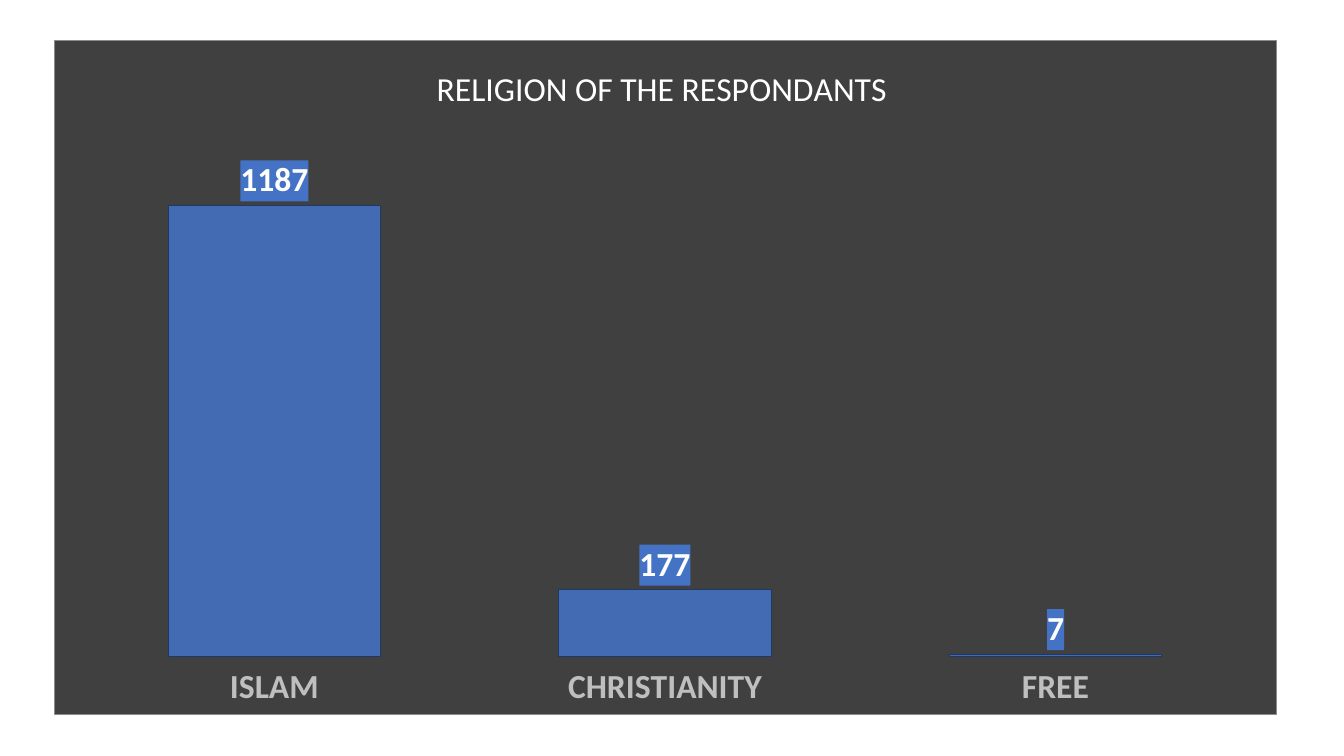
from dataclasses import dataclass

from lxml import etree
from pptx import Presentation
from pptx.chart.data import CategoryChartData
from pptx.dml.color import RGBColor
from pptx.enum.chart import XL_CHART_TYPE, XL_LABEL_POSITION, XL_TICK_LABEL_POSITION, XL_TICK_MARK
from pptx.oxml import parse_xml
from pptx.oxml.ns import nsdecls, qn
from pptx.util import Inches, Pt

COLUMNS = XL_CHART_TYPE.COLUMN_CLUSTERED
OUTSIDE_END = XL_LABEL_POSITION.OUTSIDE_END
LABELS_LOW = XL_TICK_LABEL_POSITION.LOW
NO_TICK = XL_TICK_MARK.NONE
BLANK_LAYOUT = 6


@dataclass(frozen=True)
class Theme:
    font: str = "Calibri"
    text_size: int = 24
    panel: str = "404040"
    panel_border: str = "8C8C8C"
    bar: str = "4472C4"
    bar_border: str = "203864"
    bar_alpha: int = 88
    bright: str = "FFFFFF"
    muted: str = "BFBFBF"


@dataclass(frozen=True)
class Box:
    left: float
    top: float
    width: float
    height: float


THEME = Theme()
CHART_BOX = Box(0.54, 0.4, 12.12, 6.69)
PLOT_BOX = Box(0.78, 1.23, 11.63, 5.29)
RESPONDENTS = {"ISLAM": 1187, "CHRISTIANITY": 177, "FREE": 7}


def style_font(font, color, bold):
    font.name = THEME.font
    font.size = Pt(THEME.text_size)
    font.bold = bold
    font.color.rgb = RGBColor.from_string(color)


def shape_properties(fill, border=None):
    line = "<a:ln><a:noFill/></a:ln>"
    if border:
        line = f'<a:ln w="{Pt(0.5)}"><a:solidFill><a:srgbClr val="{border}"/></a:solidFill></a:ln>'
    return parse_xml(
        f'<c:spPr {nsdecls("c", "a")}><a:solidFill><a:srgbClr val="{fill}"/>'
        f"</a:solidFill>{line}</c:spPr>"
    )


def place_plot(chart, box, plot_box):
    area = chart.plots[0]._element.getparent()
    for old in area.findall(qn("c:layout")):
        area.remove(old)
    layout = etree.Element(qn("c:layout"))
    manual = etree.SubElement(layout, qn("c:manualLayout"))
    settings = {
        "layoutTarget": "inner",
        "xMode": "edge",
        "yMode": "edge",
        "x": (plot_box.left - box.left) / box.width,
        "y": (plot_box.top - box.top) / box.height,
        "w": plot_box.width / box.width,
        "h": plot_box.height / box.height,
    }
    for name, value in settings.items():
        etree.SubElement(manual, qn(f"c:{name}")).set("val", str(value))
    area.insert(0, layout)


def style_title(chart, text):
    chart.has_title = True
    para = chart.chart_title.text_frame.paragraphs[0]
    span = para.add_run()
    span.text = text
    style_font(span.font, THEME.bright, False)
    chart.chart_title.include_in_layout = False


def style_axes(chart):
    categories = chart.category_axis
    categories.major_tick_mark = NO_TICK
    categories.minor_tick_mark = NO_TICK
    categories.tick_label_position = LABELS_LOW
    categories.has_major_gridlines = False
    categories.format.line.fill.background()
    style_font(categories.tick_labels.font, THEME.muted, True)
    values = chart.value_axis
    values.minimum_scale = 0
    values.maximum_scale = 1400
    values.has_major_gridlines = False
    values.visible = False


def style_bars(plot):
    plot.gap_width = 84
    plot.vary_by_categories = False
    series = plot.series[0]
    series.invert_if_negative = False
    bar = series.format
    bar.fill.solid()
    bar.fill.fore_color.rgb = RGBColor.from_string(THEME.bar)
    color = bar.fill._xPr.find(qn("a:solidFill"))[0]
    etree.SubElement(color, qn("a:alpha")).set("val", str(THEME.bar_alpha * 1000))
    bar.line.color.rgb = RGBColor.from_string(THEME.bar_border)
    bar.line.width = Pt(0.75)
    labels = series.data_labels
    labels.show_value = True
    labels.position = OUTSIDE_END
    style_font(labels.font, THEME.bright, True)
    text = labels._element.find(qn("c:txPr"))
    text.addprevious(shape_properties(THEME.bar))


def add_religion_chart(page, box, plot_box):
    data = CategoryChartData()
    data.categories = RESPONDENTS.keys()
    data.add_series("Series 1", RESPONDENTS.values())
    frame = page.shapes.add_chart(
        COLUMNS, Inches(box.left), Inches(box.top), Inches(box.width), Inches(box.height), data
    )
    chart = frame.chart
    chart.has_legend = False
    chart.font.name = THEME.font
    chart.font.size = Pt(10)
    style_title(chart, "RELIGION OF THE RESPONDANTS ")
    style_axes(chart)
    style_bars(chart.plots[0])
    place_plot(chart, box, plot_box)
    body = chart._chartSpace.find(qn("c:chart"))
    body.addnext(shape_properties(THEME.panel, THEME.panel_border))


def main():
    deck = Presentation()
    deck.slide_width = Inches(13.33)
    deck.slide_height = Inches(7.5)
    page = deck.slides.add_slide(deck.slide_layouts[BLANK_LAYOUT])
    add_religion_chart(page, CHART_BOX, PLOT_BOX)
    deck.save("out.pptx")


if __name__ == "__main__":
    main()
